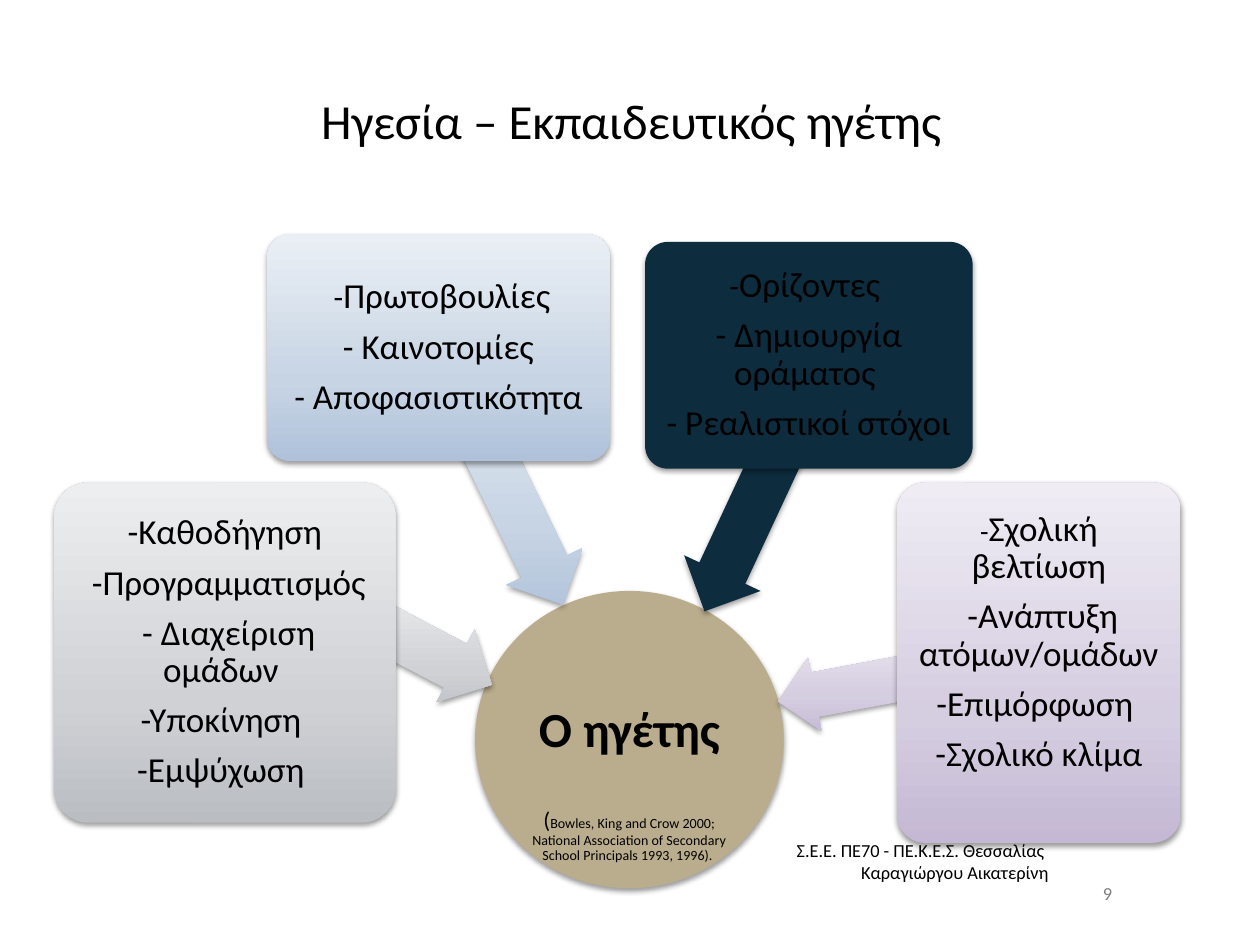
from copy import deepcopy

from lxml import etree
from pptx import Presentation
from pptx.dml.color import RGBColor
from pptx.enum.shapes import MSO_SHAPE
from pptx.enum.text import MSO_ANCHOR, PP_ALIGN
from pptx.oxml.ns import qn
from pptx.util import Inches, Pt

ELLIPSE, ARROW, CARD = MSO_SHAPE.OVAL, MSO_SHAPE.LEFT_ARROW, MSO_SHAPE.ROUNDED_RECTANGLE
TOP, MIDDLE, BOTTOM = MSO_ANCHOR.TOP, MSO_ANCHOR.MIDDLE, MSO_ANCHOR.BOTTOM
CENTER, RIGHT = PP_ALIGN.CENTER, PP_ALIGN.RIGHT

FONT = "Calibri"
BLACK, GREY_TEXT = "000000", "808080"
SAND, NAVY = ["BAAD8D"], ["0D2C3E"]
GREY = ["BABEC3", "CFD1D5", "EDEEEF"]
BLUE = ["AFC2DA", "C7D4E4", "EAEFF5"]
PURPLE = ["C4B8D4", "D5CDE0", "EFECF4"]
STOPS = [0, 0.35, 1]

# Each topic: colours, arrow place, arrow rotation, card place, first dash size,
# extra inset at the bottom, lines
TOPICS = [
    (GREY, (2.81, 4.84, 1.16, 0.65), 207.7, (0.43, 3.83, 2.71, 2.7), 20, 0,
     ["-Καθοδήγηση", " -Προγραμματισμός", " - Διαχείριση ομάδων ",
      "-Υποκίνηση ", "-Εμψύχωση "]),
    (BLUE, (2.93, 3.5, 2.14, 0.67), 244.1, (2.12, 1.86, 2.72, 1.8), 18, 0,
     [" -Πρωτοβουλίες", "- Καινοτομίες", " - Αποφασιστικότητα "]),
    (NAVY, (5.02, 3.62, 1.98, 0.67), 295, (5.12, 1.92, 2.6, 1.8), 18, 0,
     ["-Ορίζοντες ", "- Δημιουργία οράματος ", "- Ρεαλιστικοί στόχοι"]),
    (PURPLE, (6.16, 5.09, 1.97, 0.59), 349.4, (7.12, 3.83, 2.25, 2.86), 16, 0.32,
     ["-Σχολική βελτίωση", " -Ανάπτυξη ατόμων/ομάδων ", "-Επιμόρφωση ",
      "-Σχολικό κλίμα"]),
]


def color(value):
    return RGBColor.from_string(value)


def paint(shape, colors):
    """Fill with one colour, or with a gradient running from bottom to top."""
    if len(colors) == 1:
        shape.fill.solid()
        shape.fill.fore_color.rgb = color(colors[0])
        return
    shape.fill.gradient()
    shape.fill.gradient_angle = 90
    gradient = shape._element.spPr.find(qn("a:gradFill"))
    gradient.set("rotWithShape", "0")
    stop_list = gradient.find(qn("a:gsLst"))
    stop_list.append(deepcopy(stop_list[-1]))
    for stop, position, value in zip(shape.fill.gradient_stops, STOPS, colors):
        stop.position = position
        stop.color.rgb = color(value)


def add_shadow(shape):
    shape.shadow.inherit = False
    effects = shape._element.spPr.find(qn("a:effectLst"))
    shadow = etree.SubElement(effects, qn("a:outerShdw"), blurRad="40000",
                              dist="20000", dir="5400000", rotWithShape="0")
    tint = etree.SubElement(shadow, qn("a:srgbClr"), val=BLACK)
    etree.SubElement(tint, qn("a:alpha"), val="38000")


def add_figure(slide, kind, place, colors, adjustments=(), rotation=0):
    shape = slide.shapes.add_shape(kind, *map(Inches, place))
    for index, value in enumerate(adjustments):
        shape.adjustments[index] = value
    shape.rotation = rotation
    paint(shape, colors)
    shape.line.fill.background()
    add_shadow(shape)
    return shape


def set_frame(frame, anchor, inset, extra_bottom=0):
    frame.word_wrap = True
    frame.vertical_anchor = anchor
    frame.margin_left = frame.margin_right = frame.margin_top = Inches(inset)
    frame.margin_bottom = Inches(inset + extra_bottom)


def add_para(frame, text, size, align=CENTER, value=BLACK, bold=False, lead_size=None):
    """Add a paragraph; lead_size sets the size up to and including its first mark."""
    first = frame.paragraphs[0]
    para = frame.add_paragraph() if first.runs else first
    para.alignment = align
    para.font.name = FONT
    para.font.size = Pt(size)
    para.font.bold = bold
    para.font.color.rgb = color(value)
    split = len(text) - len(text.lstrip()) + 1 if lead_size else 0
    if split:
        lead = para.add_run()
        lead.text = text[:split]
        lead.font.size = Pt(lead_size)
    para.add_run().text = text[split:]
    return para


def add_label(slide, place, lines, size, anchor=MIDDLE, align=CENTER, value=BLACK):
    box = slide.shapes.add_textbox(*map(Inches, place))
    set_frame(box.text_frame, anchor, 0.05)
    box.text_frame.margin_left = box.text_frame.margin_right = Inches(0.1)
    for line in lines:
        add_para(box.text_frame, line, size, align, value)


def add_leader(slide):
    add_figure(slide, ELLIPSE, (3.77, 4.69, 2.45, 2.36), SAND)
    box = slide.shapes.add_textbox(*map(Inches, (4.13, 5.58, 1.73, 1.3)))
    set_frame(box.text_frame, TOP, 0.02)
    name = add_para(box.text_frame, "Ο ηγέτης", 28, bold=True)
    name.space_after = Pt(29)
    citation = add_para(
        box.text_frame,
        "(Bowles, King and Crow 2000; National Association of Secondary "
        "School Principals 1993, 1996). ", 8, lead_size=13)
    for para in (name, citation):
        para.line_spacing = 0.9


def add_topic(slide, colors, arrow, rotation, place, lead_size, extra_bottom, lines):
    add_figure(slide, ARROW, arrow, colors, (0.6, 0.5), rotation)
    card = add_figure(slide, CARD, place, colors, (0.1,))
    set_frame(card.text_frame, MIDDLE, 0.1, extra_bottom)
    for index, line in enumerate(lines):
        lead = lead_size if index == 0 and lead_size != 20 else None
        para = add_para(card.text_frame, line, 20, lead_size=lead)
        para.line_spacing = 0.9
        para.space_after = Pt(7)


def main():
    deck = Presentation()
    deck.slide_width, deck.slide_height = Inches(10), Inches(7.5)
    slide = deck.slides.add_slide(deck.slide_layouts[6])

    # Diagram: the leader and the four topics that point to it
    add_leader(slide)
    for topic in TOPICS:
        add_topic(slide, *topic)

    # Title, page number and footer
    add_label(slide, (0.51, 0.6, 9, 0.71), ["Ηγεσία – Εκπαιδευτικός ηγέτης"], 28)
    add_label(slide, (8.5, 7, 0.58, 0.17), ["9"], 10.5, value=GREY_TEXT)
    add_label(slide, (5.33, 6.61, 3.09, 0.45),
              ["Σ.Ε.Ε. ΠΕ70 - ΠΕ.Κ.Ε.Σ. Θεσσαλίας ", "Καραγιώργου Αικατερίνη"],
              10.5, BOTTOM, RIGHT)

    deck.save("out.pptx")


if __name__ == "__main__":
    main()
